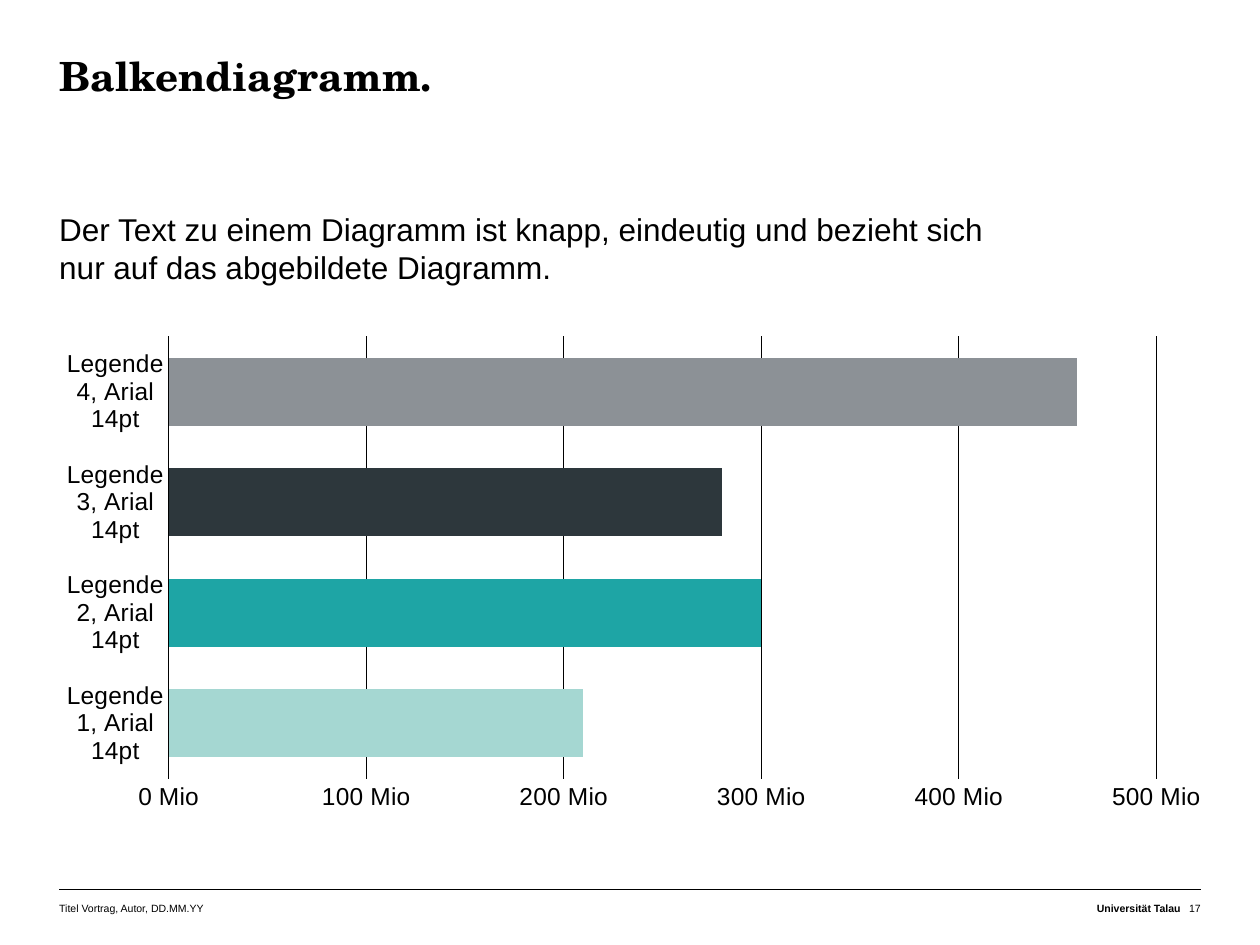
from dataclasses import dataclass

from lxml import etree
from pptx import Presentation
from pptx import util as u
from pptx.chart import data
from pptx.dml import color
from pptx.enum import chart as charts, shapes, text
from pptx.oxml import ns


@dataclass(frozen=True)
class Theme:
    ink: color.RGBColor = color.RGBColor.from_string("000000")
    bars: tuple = ("A5D7D2", "1EA5A5", "2D373C", "8C9196")
    display: str = "TeX Gyre Schola"
    sans: str = "Arial"
    title: int = 23
    body: int = 18
    label: int = 14
    footer: int = 6


theme = Theme()
presentation = Presentation()
presentation.slide_width = u.Inches(10)
presentation.slide_height = u.Inches(7.5)
slide = presentation.slides.add_slide(presentation.slide_layouts[1])

margin = 0.47
content = 10 - 2 * margin
right = 10 - margin
footer_top = 7.14
chart_height = 4.09


def set_font(font, size, name=theme.sans, bold=False):
    font.size = u.Pt(size)
    font.name = name
    font.bold = bold
    font.color.rgb = theme.ink


def write(shape, box, lines, size, name=theme.sans, bold=False,
          align=text.PP_ALIGN.LEFT, spacing=None, inset=0):
    shape.left, shape.top, shape.width, shape.height = map(u.Inches, box)
    frame = shape.text_frame
    frame.word_wrap = True
    frame.auto_size = text.MSO_AUTO_SIZE.NONE
    frame.vertical_anchor = text.MSO_ANCHOR.TOP
    frame.margin_left = frame.margin_right = frame.margin_bottom = 0
    frame.margin_top = u.Inches(inset)
    paragraph = frame.paragraphs[0]
    paragraph.alignment = align
    paragraph.space_before = u.Pt(0)
    if spacing:
        paragraph.line_spacing = u.Pt(spacing)
    for index, line in enumerate(lines):
        if index:
            paragraph.add_line_break()
        run = paragraph.add_run()
        run.text = line
        set_font(run.font, size, name, bold)
    return paragraph


rule = slide.shapes.add_connector(
    shapes.MSO_CONNECTOR.STRAIGHT,
    u.Inches(margin), u.Inches(7.06), u.Inches(right), u.Inches(7.06))
rule.line.color.rgb = theme.ink
rule.line.width = u.Pt(0.25)
etree.SubElement(rule.element.spPr, ns.qn("a:effectLst"))

write(slide.shapes.title, (margin, 0.44, content, 0.83), ["Balkendiagramm."],
      theme.title, theme.display, bold=True, spacing=25)

body = write(slide.placeholders[1], (margin, 1.66, content, 0.65),
             ["Der Text zu einem Diagramm ist knapp, eindeutig und bezieht sich ",
              "nur auf das abgebildete Diagramm."],
             theme.body, spacing=22)
properties = body._p.get_or_add_pPr()
properties.set("marL", "0")
properties.set("indent", "0")
etree.SubElement(properties, ns.qn("a:buNone"))

footers = [
    (margin, 2.36, "Titel Vortrag, Autor, DD.MM.YY", False, text.PP_ALIGN.LEFT),
    (7.28, 2.09, "Universität Talau", True, text.PP_ALIGN.RIGHT),
    (9.37, 0.16, "17", False, text.PP_ALIGN.RIGHT),
]
for left, width, words, bold, align in footers:
    footer = slide.shapes.add_textbox(0, 0, 0, 0)
    write(footer, (left, footer_top, width, 0.2), [words], theme.footer,
          bold=bold, align=align, inset=0.02)

chart_data = data.CategoryChartData()
chart_data.categories = [f"Legende {number}, Arial 14pt" for number in range(1, 5)]
chart_data.add_series("Series 1", (210, 300, 280, 460))
chart = slide.shapes.add_chart(
    charts.XL_CHART_TYPE.BAR_CLUSTERED, u.Inches(margin), u.Inches(2.57),
    u.Inches(content), u.Inches(chart_height), chart_data).chart
chart.has_legend = False
chart.has_title = False
set_font(chart.font, theme.label)

categories = chart.category_axis
categories.major_tick_mark = charts.XL_TICK_MARK.NONE
categories.has_major_gridlines = False
values = chart.value_axis
values.major_tick_mark = charts.XL_TICK_MARK.NONE
values.minimum_scale, values.maximum_scale, values.major_unit = 0, 500, 100
values.has_major_gridlines = True
values.format.line.fill.background()
values.tick_labels.number_format = '#0\\ "Mio"'
values.tick_labels.number_format_is_linked = False
for line in (categories.format.line, values.major_gridlines.format.line):
    line.color.rgb = theme.ink
    line.width = u.Pt(0.5)

plot = chart.plots[0]
plot.gap_width = 63
plot.vary_by_categories = False
series = plot.series[0]
series.format.fill.solid()
series.format.fill.fore_color.rgb = color.RGBColor.from_string(theme.bars[0])
for index, shade in enumerate(theme.bars):
    fill = series.points[index].format.fill
    fill.solid()
    fill.fore_color.rgb = color.RGBColor.from_string(shade)

plot_area = chart._chartSpace.chart.plotArea
for old in plot_area.findall(ns.qn("c:layout")):
    plot_area.remove(old)
layout = etree.Element(ns.qn("c:layout"))
manual = etree.SubElement(layout, ns.qn("c:manualLayout"))
for tag, value in (("layoutTarget", "inner"), ("xMode", "edge"), ("yMode", "edge"),
                   ("x", 0.87 / content), ("y", 0.1 / chart_height),
                   ("w", 7.85 / content), ("h", 3.51 / chart_height)):
    etree.SubElement(manual, ns.qn(f"c:{tag}")).set("val", str(value))
plot_area.insert(0, layout)

presentation.save("out.pptx")
